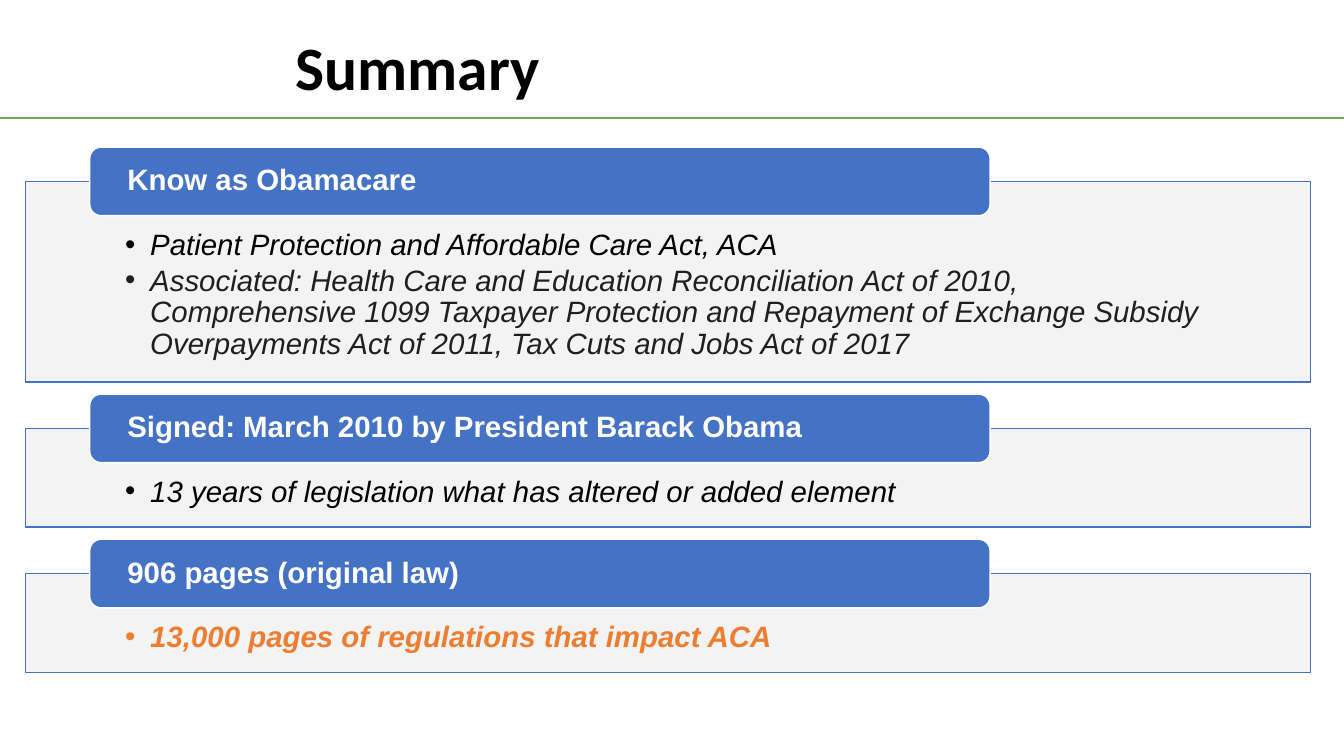
from dataclasses import dataclass

from lxml.etree import SubElement
from pptx import Presentation
from pptx.dml.color import RGBColor
from pptx.enum.shapes import MSO_CONNECTOR, MSO_SHAPE
from pptx.enum.text import MSO_ANCHOR, MSO_AUTO_SIZE, PP_ALIGN
from pptx.oxml.ns import qn
from pptx.util import Emu, Pt


@dataclass(frozen=True)
class Theme:
    blue: str = "4472C4"
    green: str = "70AD47"
    orange: str = "ED7D31"
    panel: str = "F2F2F2"
    white: str = "FFFFFF"
    black: str = "000000"
    charcoal: str = "1F1F1F"
    title_font: str = "Calibri"
    text_font: str = "Arial"
    title_size: int = 44
    text_size: int = 21


THEME = Theme()


@dataclass(frozen=True)
class Bullet:
    text: str
    color: str = THEME.black
    bold: bool = False


@dataclass(frozen=True)
class Section:
    heading: str
    height: int
    bullets: tuple[Bullet, ...]


SECTIONS = (
    Section("Know as Obamacare", 199, (
        Bullet("Patient Protection and Affordable Care Act, ACA"),
        Bullet("Associated: Health Care and Education Reconciliation Act of 2010, "
               "Comprehensive 1099 Taxpayer Protection and Repayment of Exchange "
               "Subsidy Overpayments Act of 2011, Tax Cuts and Jobs Act of 2017",
               THEME.charcoal),
    )),
    Section("Signed: March 2010 by President Barack Obama", 98, (
        Bullet("13 years of legislation what has altered or added element"),
    )),
    Section("906 pages (original law)", 98, (
        Bullet("13,000 pages of regulations that impact ACA", THEME.orange, bold=True),
    )),
)

# Layout in px, 100 to the inch
PAGE_WIDTH, PAGE_HEIGHT = 1333, 750
FIRST_TOP, SECTION_GAP, HEADING_RISE = 180, 46, 34


def px(length: int) -> Emu:
    return Emu(length * 9144)


def rgb(color: str) -> RGBColor:
    return RGBColor.from_string(color)


def set_font(para, name: str, size: int, color: str,
             bold: bool = False, italic: bool = False) -> None:
    font = para.font
    font.name, font.size = name, Pt(size)
    font.bold, font.italic = bold, italic
    font.color.rgb = rgb(color)


def add_box(page, kind: MSO_SHAPE, place: tuple[int, int, int, int],
            fill: str, line: str, insets: tuple[int, int, int, int],
            anchor: MSO_ANCHOR):
    box = page.shapes.add_shape(kind, *map(px, place))
    box.shadow.inherit = False
    box.fill.solid()
    box.fill.fore_color.rgb = rgb(fill)
    box.line.color.rgb = rgb(line)
    box.line.width = Pt(1)
    frame = box.text_frame
    frame.word_wrap = True
    frame.vertical_anchor = anchor
    (frame.margin_left, frame.margin_top,
     frame.margin_right, frame.margin_bottom) = map(px, insets)
    return box


def write_bullet(para, bullet: Bullet) -> None:
    para.text = bullet.text
    para.level = 1
    para.alignment = PP_ALIGN.LEFT
    para.line_spacing = 0.9
    para.space_after = Pt(3)
    properties = para._p.get_or_add_pPr()
    properties.set("marL", str(px(25)))
    properties.set("indent", str(px(-25)))
    SubElement(properties, qn("a:buFont"), typeface=THEME.text_font)
    SubElement(properties, qn("a:buChar"), char="•")
    set_font(para, THEME.text_font, THEME.text_size, bullet.color, bullet.bold, True)


def add_section(page, section: Section, top: int) -> None:
    # Panel with its bullets
    panel = add_box(page, MSO_SHAPE.RECTANGLE, (25, top, 1275, section.height),
                    THEME.panel, THEME.blue, (99, 48, 99, 16), MSO_ANCHOR.TOP)
    fill_color = panel.fill._xPr.find(qn("a:solidFill"))[0]
    SubElement(fill_color, qn("a:alpha"), val="90000")
    frame = panel.text_frame
    for index, bullet in enumerate(section.bullets):
        para = frame.add_paragraph() if index else frame.paragraphs[0]
        write_bullet(para, bullet)

    # Heading tab over the panel's top edge
    tab = add_box(page, MSO_SHAPE.ROUNDED_RECTANGLE, (89, top - HEADING_RISE, 893, 68),
                  THEME.blue, THEME.white, (34, 0, 34, 0), MSO_ANCHOR.MIDDLE)
    para = tab.text_frame.paragraphs[0]
    para.text = section.heading
    para.alignment = PP_ALIGN.LEFT
    para.line_spacing = 0.9
    set_font(para, THEME.text_font, THEME.text_size, THEME.white, bold=True)


def add_title(page, text: str) -> None:
    title = page.shapes.title
    title.left, title.top, title.width, title.height = map(px, (283, 36, 1033, 68))
    frame = title.text_frame
    frame.auto_size = MSO_AUTO_SIZE.NONE
    frame.vertical_anchor = MSO_ANCHOR.MIDDLE
    para = frame.paragraphs[0]
    para.text = text
    para.alignment = PP_ALIGN.LEFT
    para.line_spacing = 0.9
    set_font(para, THEME.title_font, THEME.title_size, THEME.black, bold=True)


def add_rule(page, top: int) -> None:
    rule = page.shapes.add_connector(MSO_CONNECTOR.STRAIGHT, 0, px(top),
                                     px(PAGE_WIDTH), px(top))
    rule.line.color.rgb = rgb(THEME.green)
    rule.line.width = Pt(1.25)
    SubElement(rule._element.spPr, qn("a:effectLst"))


def main() -> None:
    deck = Presentation()
    deck.slide_width, deck.slide_height = px(PAGE_WIDTH), px(PAGE_HEIGHT)
    page = deck.slides.add_slide(deck.slide_layouts[5])
    add_title(page, "Summary")
    add_rule(page, 117)

    # Sections stacked with equal gaps
    top = FIRST_TOP
    for section in SECTIONS:
        add_section(page, section, top)
        top += section.height + SECTION_GAP
    deck.save("out.pptx")


if __name__ == "__main__":
    main()
